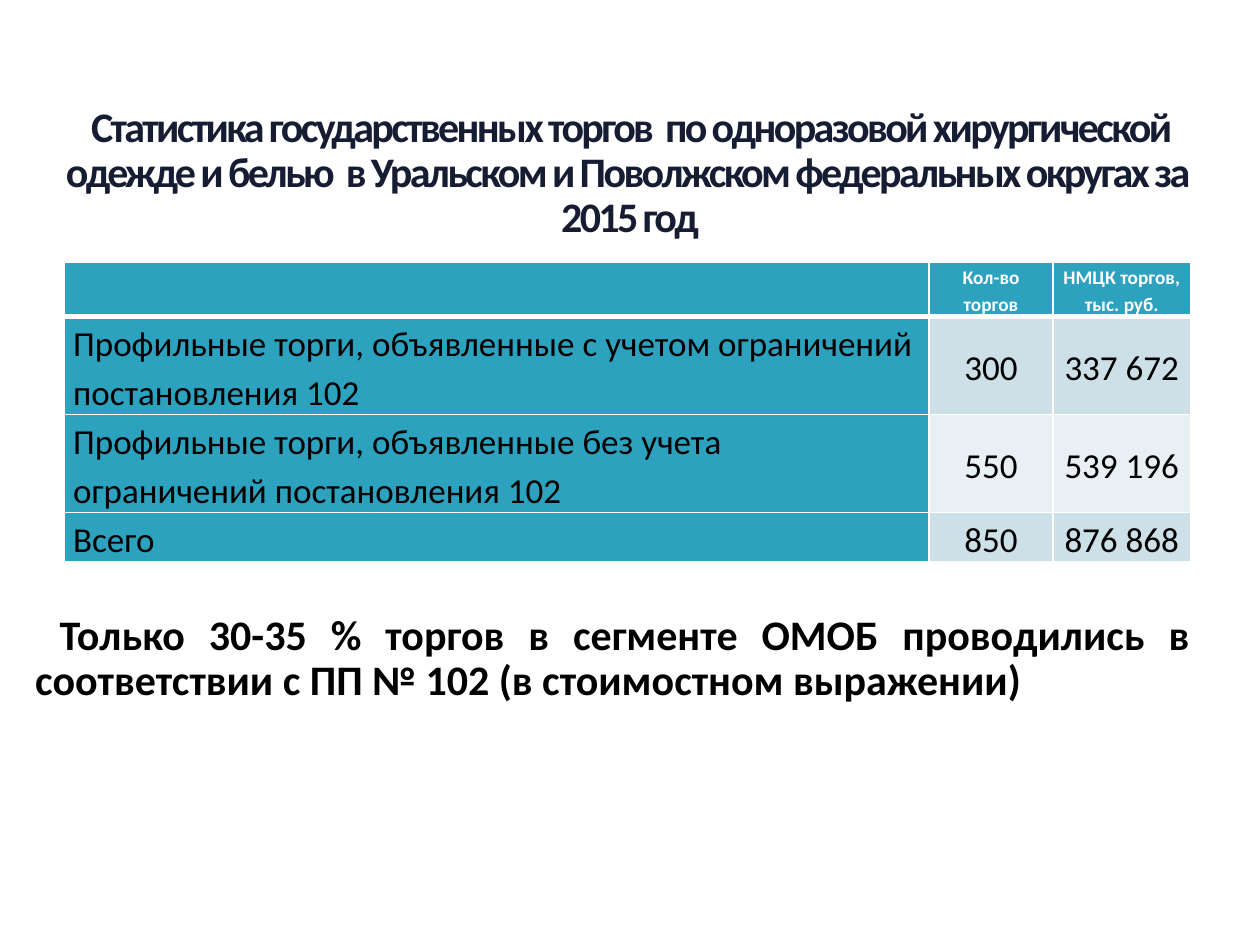
"""Build a slide with tender statistics for single-use surgical clothing."""
from dataclasses import dataclass

from lxml import etree
from pptx import Presentation
from pptx.dml.color import RGBColor
from pptx.enum.text import MSO_ANCHOR, PP_ALIGN
from pptx.oxml.ns import qn
from pptx.util import Pt

LEFT, CENTER, JUSTIFY = PP_ALIGN.LEFT, PP_ALIGN.CENTER, PP_ALIGN.JUSTIFY
MIDDLE = MSO_ANCHOR.MIDDLE
BLANK_LAYOUT = 6


@dataclass(frozen=True)
class Theme:
    font: str = "Calibri"
    title: str = "161D32"
    text: str = "000000"
    white: str = "FFFFFF"
    accent: str = "2DA2BF"
    bands: tuple = ("CDE0E8", "E8F0F4")
    heading_size: int = 24
    cell_size: int = 20
    header_size: int = 11
    rule: int = 1
    heavy_rule: int = 3


def write_text(frame, text, *, font, size, color, bold=False, align=LEFT,
               line_spacing=0.9, tracking=0, indent=0):
    paragraph = frame.paragraphs[0]
    paragraph.alignment = align
    paragraph.line_spacing = line_spacing
    if indent:
        paragraph._p.get_or_add_pPr().set("indent", str(Pt(indent)))
    run = paragraph.add_run()
    run.text = text
    run.font.name = font
    run.font.size = Pt(size)
    run.font.bold = bold
    run.font.color.rgb = RGBColor.from_string(color)
    if tracking:
        run._r.get_or_add_rPr().set("spc", str(round(tracking * 100)))


class SlideBuilder:
    def __init__(self, slide, theme):
        self.slide = slide
        self.theme = theme

    def text_box(self, left, top, width, height, text, **text_format):
        shape = self.slide.shapes.add_textbox(Pt(left), Pt(top), Pt(width), Pt(height))
        frame = shape.text_frame
        frame.word_wrap = True
        frame.margin_left = frame.margin_right = frame.margin_top = frame.margin_bottom = 0
        write_text(frame, text, font=self.theme.font, size=self.theme.heading_size,
                   bold=True, **text_format)

    def borders(self, cell, top, bottom):
        properties = cell._tc.get_or_add_tcPr()
        rule = self.theme.rule
        for side, width in (("L", rule), ("R", rule), ("T", top), ("B", bottom)):
            line = etree.SubElement(properties, qn(f"a:ln{side}"), w=str(Pt(width)))
            fill = etree.SubElement(line, qn("a:solidFill"))
            etree.SubElement(fill, qn("a:srgbClr"), val=self.theme.white)

    def cell(self, cell, text, row, column):
        theme = self.theme
        header = row == 0
        self.borders(cell, theme.heavy_rule if row == 1 else theme.rule,
                     theme.heavy_rule if header else theme.rule)
        accented = header or column == 0
        fill = theme.accent if accented else theme.bands[(row - 1) % 2]
        cell.fill.solid()
        cell.fill.fore_color.rgb = RGBColor.from_string(fill)
        cell.vertical_anchor = MIDDLE
        cell.margin_left = cell.margin_right = Pt(5)
        cell.margin_top = cell.margin_bottom = 0
        if text:
            write_text(cell.text_frame, text, font=theme.font,
                       size=theme.header_size if header else theme.cell_size,
                       color=theme.white if header else theme.text, bold=header,
                       align=CENTER if column else LEFT, line_spacing=1.15)

    def table(self, left, top, widths, heights, rows):
        shape = self.slide.shapes.add_table(len(heights), len(widths), Pt(left), Pt(top),
                                            Pt(sum(widths)), Pt(sum(heights)))
        table = shape.table
        table.first_row = table.horz_banding = False
        for column, width in zip(table.columns, widths):
            column.width = Pt(width)
        for row, height in zip(table.rows, heights):
            row.height = Pt(height)
        for row, values in enumerate(rows):
            for column, text in enumerate(values):
                self.cell(table.cell(row, column), text, row, column)


def main():
    presentation = Presentation()
    presentation.slide_width, presentation.slide_height = Pt(720), Pt(540)
    theme = Theme()
    slide = presentation.slides.add_slide(presentation.slide_layouts[BLANK_LAYOUT])
    builder = SlideBuilder(slide, theme)
    builder.text_box(
        30, 60.5, 660, 84,
        "Статистика государственных торгов  по одноразовой хирургической одежде и белью  "
        "в Уральском и Поволжском федеральных округах за  2015 год",
        color=theme.title, align=CENTER, tracking=-1.5)
    builder.text_box(
        20, 351, 660, 56,
        "Только 30-35 % торгов в сегменте ОМОБ проводились в соответствии "
        "с ПП № 102 (в стоимостном выражении)",
        color=theme.text, align=JUSTIFY, indent=14)
    builder.table(36.8, 150, (494, 71, 78.5), (31, 56, 56, 28), (
        ("", "Кол-во торгов", "НМЦК торгов, тыс. руб."),
        ("Профильные торги, объявленные с учетом ограничений постановления 102",
         "300", "337 672"),
        ("Профильные торги, объявленные без учета ограничений постановления 102",
         "550", "539 196"),
        ("Всего", "850", "876 868"),
    ))
    presentation.save("out.pptx")


if __name__ == "__main__":
    main()
